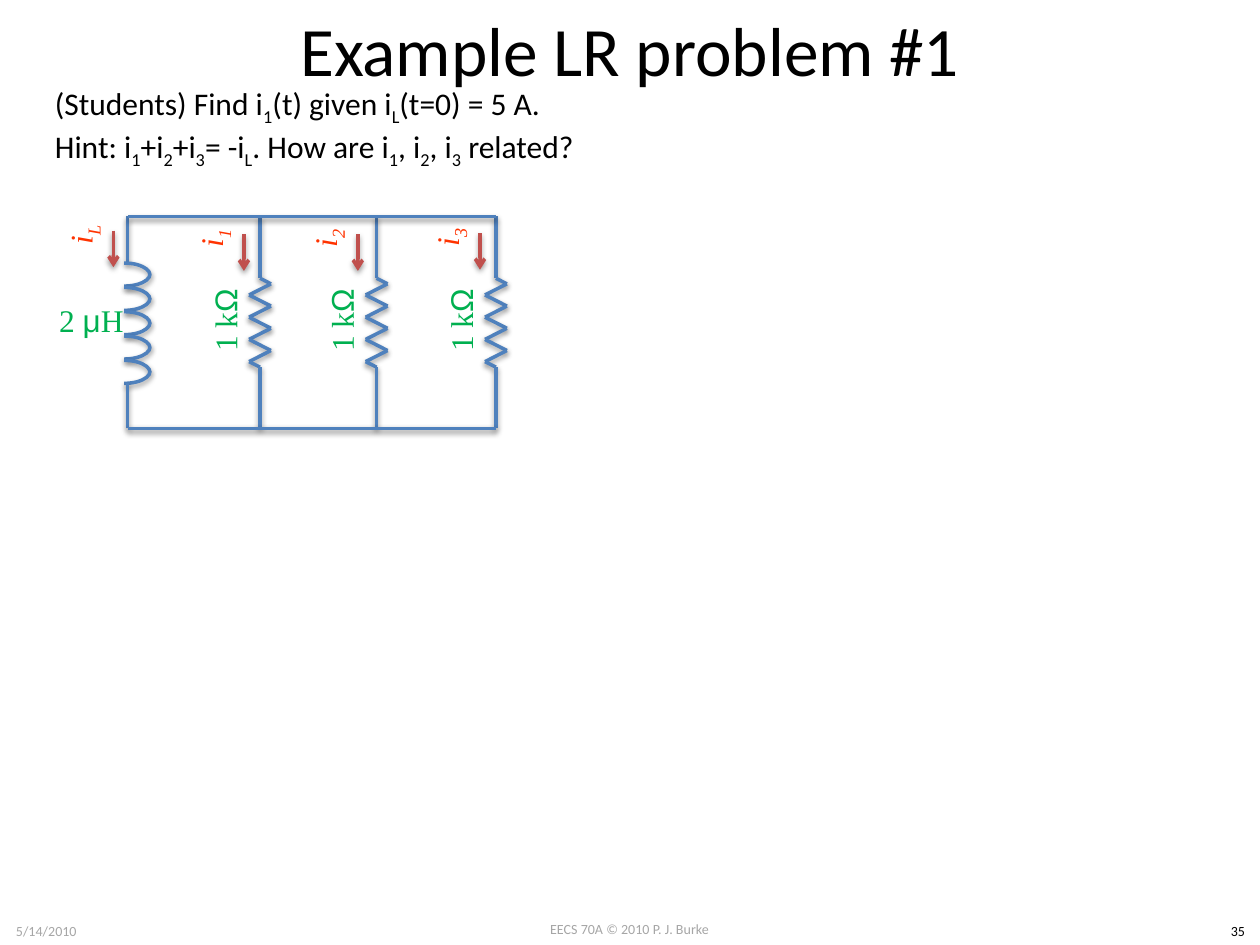
from lxml import etree
from pptx import Presentation
from pptx.dml.color import RGBColor
from pptx.enum.shapes import MSO_CONNECTOR as CONN, MSO_SHAPE as SHAPE
from pptx.enum.text import MSO_ANCHOR as ANCHOR, MSO_AUTO_SIZE as AUTO, PP_ALIGN as ALIGN
from pptx.oxml.ns import qn
from pptx.util import Pt

WIRE, ARROW, CURRENT, VALUE, GREY, BLACK = (
    "4F81BD", "C0504D", "FF3300", "00B050", "A6A6A6", "000000")
TOP, BOTTOM = 123.7, 244.8
INDUCTOR_X = 73
RESISTOR_XS = 148.6, 215.2, 283.4


def rgb(value):
    return RGBColor.from_string(value)


class Circuit:
    """Holds the slide style and the shape collection being drawn into."""
    line_width = 2
    size = 18

    def __init__(self, slide):
        self.slide = slide
        self.shapes = slide.shapes

    def start_group(self):
        self.shapes = self.slide.shapes.add_group_shape().shapes

    def end_group(self):
        self.shapes = self.slide.shapes

    def outline(self, sp, color):
        """Set the line and the soft shadow beneath it."""
        sp.line.color.rgb = rgb(color)
        sp.line.width = Pt(self.line_width)
        spPr = sp._element.spPr
        effects = etree.SubElement(spPr, qn("a:effectLst"))
        shadow = etree.SubElement(
            effects, qn("a:outerShdw"), blurRad=str(Pt(3.1)), dist=str(Pt(1.6)),
            dir="5400000", rotWithShape="0")
        black = etree.SubElement(shadow, qn("a:srgbClr"), val=BLACK)
        etree.SubElement(black, qn("a:alpha"), val="38000")

    def line(self, x1, y1, x2, y2, color=WIRE):
        sp = self.shapes.add_connector(CONN.STRAIGHT, Pt(x1), Pt(y1), Pt(x2), Pt(y2))
        self.outline(sp, color)
        return sp

    def arc(self, x, y, w, h, flip=False):
        sp = self.shapes.add_shape(SHAPE.ARC, Pt(x), Pt(y), Pt(w), Pt(h))
        sp.fill.background()
        self.outline(sp, WIRE)
        if flip:
            sp._element.spPr.find(qn("a:xfrm")).set("flipV", "1")

    def text(self, x, y, w, h, lines, color=BLACK, size=None, font="Calibri",
             alt_font=None, align=ALIGN.CENTER, anchor=ANCHOR.MIDDLE,
             italic=False, rotation=0, grow=False):
        """Parts between underscores are subscripts, or take alt_font if given."""
        sp = self.shapes.add_textbox(Pt(x), Pt(y), Pt(w), Pt(h))
        sp.rotation = rotation
        tf = sp.text_frame
        tf.word_wrap = not grow
        tf.auto_size = AUTO.SHAPE_TO_FIT_TEXT if grow else AUTO.NONE
        tf.vertical_anchor = anchor
        for i, line in enumerate(lines):
            p = tf.add_paragraph() if i else tf.paragraphs[0]
            p.alignment = align
            for j, part in enumerate(line.split("_")):
                if not part:
                    continue
                r = p.add_run()
                r.text = part
                r.font.size = Pt(size or self.size)
                r.font.name = font
                r.font.italic = italic
                r.font.color.rgb = rgb(color)
                if j % 2 and alt_font:
                    r.font.name = alt_font
                elif j % 2:
                    r.font._element.set("baseline", "-25000")

    def value(self, x, y, label, rotation=0):
        """Component value centred on x, y."""
        w, h = 85.7, 52.6
        self.text(x - w / 2, y - h / 2, w, h, [label], VALUE,
                  font="Times New Roman", alt_font="Arial", rotation=rotation)

    def inductor(self, x):
        self.start_group()
        self.line(x, 149.8, x, TOP)
        for i in range(5):
            y = 150.3 + 13.9 * i
            self.arc(x - 16.8, y, 29.5, 13.7)
            self.arc(x - 16.8, y - 0.5, 29.5, 13.7, flip=True)
        self.line(x, BOTTOM, x, 218.9)
        self.end_group()
        self.value(x - 20.8, 183, "2 _μ_H")

    def resistor(self, x):
        self.start_group()
        self.value(x - 20.2, 183, "1 k_Ω", rotation=270)
        zigzag = [(x + (-6.25 if i % 2 else 6.25), 162.2 + 6.35 * i) for i in range(8)]
        points = [(x, TOP), (x, 159), *zigzag, (x, 209.8), (x, BOTTOM)]
        for start, end in zip(points, points[1:]):
            self.line(*start, *end)
        self.end_group()

    def current(self, x, y, name):
        """Downward arrow from x, y with its label to the left."""
        sp = self.line(x, y, x, y + 20.9, ARROW)
        etree.SubElement(sp.line._get_or_add_ln(), qn("a:tailEnd"), type="arrow")
        w, h = 55.4, 43.9
        self.text(x - 17.6 - w / 2, y + 2.5 - h / 2, w, h, [f"i_{name}"], CURRENT,
                  font="Times New Roman", italic=True, rotation=270)


def main():
    prs = Presentation()
    prs.slide_width, prs.slide_height = Pt(720), Pt(540)
    c = Circuit(prs.slides.add_slide(prs.slide_layouts[6]))

    for x, y, w, label, color in (
            (275.8, 522.7, 168, "EECS 70A © 2010 P. J. Burke", GREY),
            (0, 523.4, 53, "5/14/2010", GREY),
            (694.8, 523.4, 25.2, "35", BLACK)):
        c.text(x, y, w, 17, [label], color, size=8, anchor=ANCHOR.TOP, grow=True)
    c.text(36, 0, 648, 56, ["Example LR problem #1"], size=39.6)
    c.text(24.3, 44.6, 322, 51, [
        "(Students) Find i_1_(t) given i_L_(t=0) = 5 A.",
        "Hint: i_1_+i_2_+i_3_= -i_L_. How are i_1_, i_2_, i_3_ related?",
    ], align=ALIGN.LEFT, anchor=ANCHOR.TOP, grow=True)

    c.inductor(INDUCTOR_X)
    for x in RESISTOR_XS:
        c.resistor(x)
    for y in (TOP, BOTTOM):
        c.line(RESISTOR_XS[-1], y, INDUCTOR_X, y)
    for x, y, name in ((274.3, 133.2, "3"), (204.5, 133.9, "2"),
                       (139.4, 133.9, "1"), (64.8, 131.8, "L")):
        c.current(x, y, name)

    prs.save("out.pptx")


if __name__ == "__main__":
    main()
